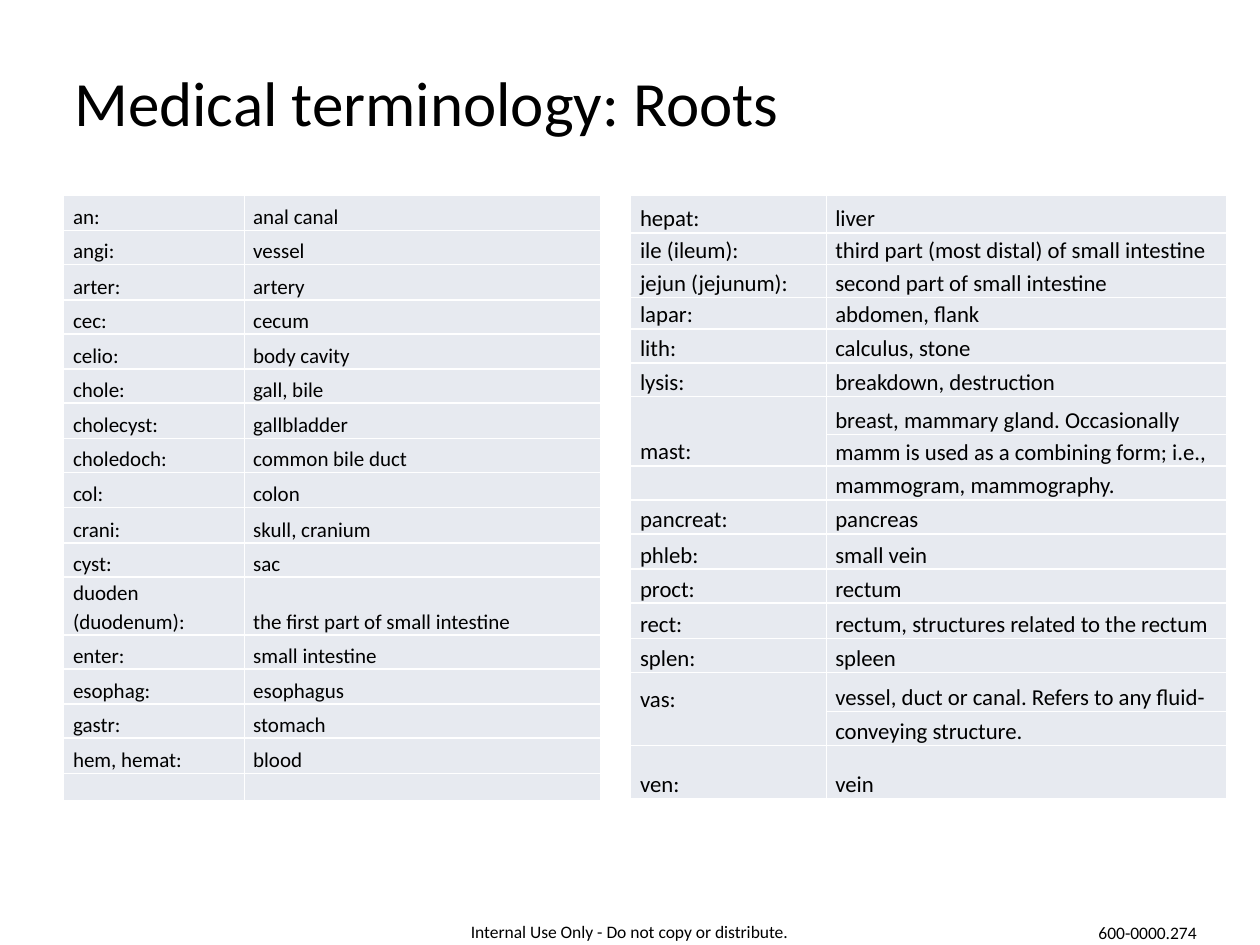
from dataclasses import dataclass

from lxml.etree import SubElement
from pptx import Presentation
from pptx.dml.color import RGBColor
from pptx.enum.text import MSO_ANCHOR, MSO_AUTO_SIZE, PP_ALIGN
from pptx.oxml.ns import qn
from pptx.slide import Slide
from pptx.table import _Cell
from pptx.text.text import TextFrame
from pptx.util import Inches, Pt


@dataclass(frozen=True)
class Theme:
    font: str = "Calibri"
    ink: str = "000000"
    cell: str = "E7EAF0"
    border: str = "FFFFFF"
    border_width: float = 1
    line_spacing: float = 1.15
    title_size: float = 36
    footer_size: float = 10


THEME = Theme()


@dataclass(frozen=True)
class Glossary:
    left: float
    size: float
    columns: tuple[float, float]
    heights: tuple[float, ...]
    entries: tuple[tuple[str, str], ...]
    merged_starts: tuple[int, ...] = ()
    raised_terms: tuple[str, ...] = ()
    top: float = 1.55


@dataclass(frozen=True)
class Footer:
    text: str
    left: float
    top: float
    width: float
    wrap: bool
    align: PP_ALIGN
    height: float = 0.27


GLOSSARIES = (
    Glossary(
        left=0.5,
        size=12,
        columns=(1.44, 2.83),
        heights=(0.28, 0.27, 0.28, 0.27, 0.28, 0.27, 0.28, 0.27, 0.28,
                 0.28, 0.27, 0.45, 0.27, 0.28, 0.27, 0.28, 0.22),
        entries=(
            ("an:", "anal canal"),
            ("angi:", "vessel"),
            ("arter:", "artery"),
            ("cec:", "cecum"),
            ("celio:", "body cavity"),
            ("chole:", "gall, bile"),
            ("cholecyst:", "gallbladder"),
            ("choledoch:", "common bile duct"),
            ("col:", "colon"),
            ("crani:", "skull, cranium"),
            ("cyst:", "sac"),
            ("duoden (duodenum):", "the first part of small intestine"),
            ("enter:", "small intestine"),
            ("esophag:", "esophagus"),
            ("gastr:", "stomach"),
            ("hem, hemat:", "blood"),
            ("", ""),
        ),
    ),
    Glossary(
        left=5,
        size=13,
        columns=(1.56, 3.18),
        heights=(0.3, 0.24, 0.26, 0.25, 0.27, 0.27, 0.3, 0.23, 0.27,
                 0.27, 0.28, 0.27, 0.28, 0.27, 0.31, 0.27, 0.42),
        entries=(
            ("hepat:", "liver"),
            ("ile (ileum):", "third part (most distal) of small intestine"),
            ("jejun (jejunum):", "second part of small intestine"),
            ("lapar:", "abdomen, flank"),
            ("lith:", "calculus, stone"),
            ("lysis:", "breakdown, destruction"),
            ("mast:", "breast, mammary gland. Occasionally"),
            ("", "mamm is used as a combining form; i.e.,"),
            ("", "mammogram, mammography."),
            ("pancreat:", "pancreas"),
            ("phleb:", "small vein"),
            ("proct:", "rectum"),
            ("rect:", "rectum, structures related to the rectum"),
            ("splen:", "spleen"),
            ("vas:", "vessel, duct or canal. Refers to any fluid-"),
            ("", "conveying structure."),
            ("ven:", "vein"),
        ),
        merged_starts=(6, 14),
        raised_terms=("vas:",),
    ),
)

FOOTERS = (
    Footer("Internal Use Only - Do not copy or distribute.",
           3.58, 7.26, 2.83, True, PP_ALIGN.CENTER),
    Footer("600-0000.274", 8.62, 7.27, 1, False, PP_ALIGN.LEFT),
)


def write_text(frame: TextFrame, text: str, *, size: float,
               align: PP_ALIGN = PP_ALIGN.LEFT, spacing: float = 1) -> None:
    para = frame.paragraphs[0]
    para.alignment = align
    para.line_spacing = spacing
    if not text:
        SubElement(para._p, qn("a:endParaRPr"), sz=str(int(size * 100)))
        return
    span = para.add_run()
    span.text = text
    span.font.name = THEME.font
    span.font.size = Pt(size)
    span.font.color.rgb = RGBColor.from_string(THEME.ink)


def style_cell(cell: _Cell, indent: float) -> None:
    properties = cell._tc.get_or_add_tcPr()
    for side in ("L", "R", "T", "B"):
        line = SubElement(properties, qn(f"a:ln{side}"), w=str(Pt(THEME.border_width)))
        fill = SubElement(line, qn("a:solidFill"))
        SubElement(fill, qn("a:srgbClr"), val=THEME.border)
    cell.fill.solid()
    cell.fill.fore_color.rgb = RGBColor.from_string(THEME.cell)
    cell.vertical_anchor = MSO_ANCHOR.BOTTOM
    cell.margin_left = Inches(indent)
    cell.margin_right = cell.margin_top = cell.margin_bottom = 0


def add_glossary(slide: Slide, glossary: Glossary) -> None:
    table = slide.shapes.add_table(
        len(glossary.entries), len(glossary.columns),
        Inches(glossary.left), Inches(glossary.top),
        Inches(sum(glossary.columns)), Inches(sum(glossary.heights)),
    ).table
    table.first_row = table.horz_banding = False
    for column, width in zip(table.columns, glossary.columns):
        column.width = Inches(width)
    for row, height, entry in zip(table.rows, glossary.heights, glossary.entries):
        row.height = Inches(height)
        for cell, text, indent in zip(row.cells, entry, (0.08, 0.07)):
            style_cell(cell, indent)
            write_text(cell.text_frame, text, size=glossary.size,
                       spacing=THEME.line_spacing)
            if text in glossary.raised_terms:
                cell.margin_bottom = Inches(0.25)
    for start in glossary.merged_starts:
        table.cell(start, 0).merge(table.cell(start + 1, 0))


def add_title(slide: Slide, text: str) -> None:
    title = slide.shapes.title
    title.left, title.top = Inches(0.59), Inches(0.5)
    title.width, title.height = Inches(8.81), Inches(1.1)
    frame = title.text_frame
    frame.margin_left = frame.margin_right = frame.margin_top = frame.margin_bottom = 0
    frame.vertical_anchor = MSO_ANCHOR.TOP
    frame.auto_size = MSO_AUTO_SIZE.NONE
    write_text(frame, text, size=THEME.title_size)


def add_footer(slide: Slide, footer: Footer) -> None:
    box = slide.shapes.add_textbox(Inches(footer.left), Inches(footer.top),
                                   Inches(footer.width), Inches(footer.height))
    frame = box.text_frame
    frame.word_wrap = footer.wrap
    frame.auto_size = MSO_AUTO_SIZE.SHAPE_TO_FIT_TEXT
    write_text(frame, footer.text, size=THEME.footer_size, align=footer.align)


def main() -> None:
    deck = Presentation()
    deck.slide_width, deck.slide_height = Inches(10), Inches(7.5)
    slide = deck.slides.add_slide(deck.slide_layouts[5])
    for footer in FOOTERS:
        add_footer(slide, footer)
    add_title(slide, "Medical terminology: Roots")
    for glossary in GLOSSARIES:
        add_glossary(slide, glossary)
    deck.save("out.pptx")


if __name__ == "__main__":
    main()
